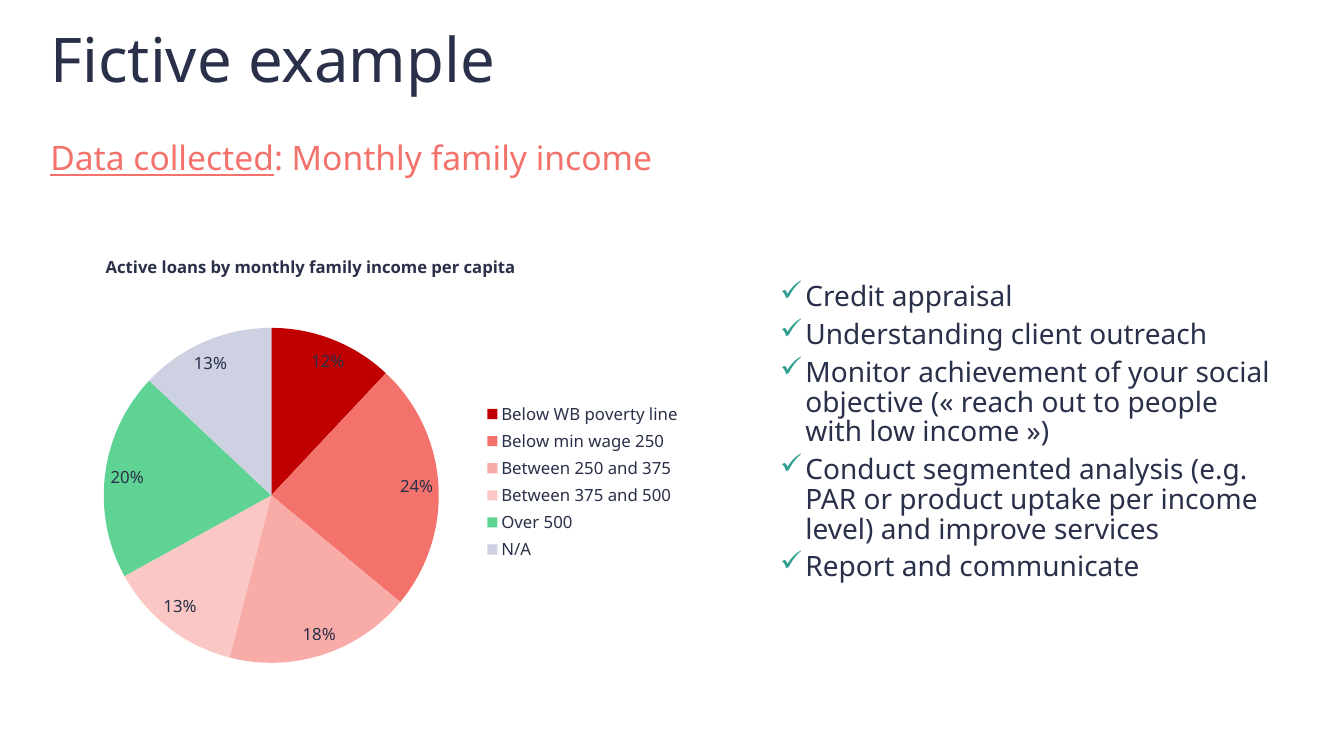
from lxml import etree
from pptx import Presentation
from pptx.chart.data import CategoryChartData
from pptx.dml.color import RGBColor
from pptx.enum.chart import XL_CHART_TYPE, XL_LABEL_POSITION, XL_LEGEND_POSITION
from pptx.enum.text import MSO_ANCHOR, MSO_AUTO_SIZE, PP_ALIGN
from pptx.oxml import parse_xml
from pptx.oxml.ns import nsdecls, qn
from pptx.util import Inches, Pt

FONT = "Noto Sans"
NAVY = RGBColor(0x2A, 0x30, 0x49)
CORAL = RGBColor(0xF3, 0x73, 0x6C)
TEAL = RGBColor(0x2E, 0xA0, 0x92)

TITLE = "Fictive example"
SUBTITLE = ("Data collected", ": Monthly family income")
CHART_TITLE = "Active loans by monthly family income per capita"
USES = [
    "Credit appraisal",
    "Understanding client outreach",
    "Monitor achievement of your social objective («\u00a0reach out to people with low income\u00a0»)",
    "Conduct segmented analysis (e.g. PAR or product uptake per income level) and improve services",
    "Report and communicate",
]
INCOME_GROUPS = [
    ("Below WB poverty line", 0.12, RGBColor(0xC0, 0x00, 0x00)),
    ("Below min wage 250", 0.24, CORAL),
    ("Between 250 and 375", 0.18, RGBColor(0xF8, 0xAB, 0xA7)),
    ("Between 375 and 500", 0.13, RGBColor(0xFA, 0xC7, 0xC4)),
    ("Over 500", 0.2, RGBColor(0x5F, 0xD3, 0x94)),
    ("N/A", 0.13, RGBColor(0xCD, 0xD1, 0xE2)),
]
PIE_AREA = {"x": 0.07, "y": 0.1, "w": 0.53, "h": 0.87}


def style_font(font, size, color, bold=False):
    """Apply the slide typeface with a size and colour."""
    font.name = FONT
    font.size = Pt(size)
    font.color.rgb = color
    font.bold = bold


def add_text(slide, box, paragraphs, size, color, bold=False, spacing=1.0):
    """Add a wrapped text box and return its paragraphs."""
    frame = slide.shapes.add_textbox(*map(Inches, box)).text_frame
    frame.word_wrap = True
    frame.text = "\n".join(paragraphs)
    for paragraph in frame.paragraphs:
        paragraph.space_after = Pt(6)
        paragraph.line_spacing = spacing
        for run in paragraph.runs:
            style_font(run.font, size, color, bold)
    return frame.paragraphs


def add_check(paragraph):
    """Give a paragraph a hanging check mark."""
    properties = paragraph._p.get_or_add_pPr()
    properties.set("marL", str(Inches(0.25)))
    properties.set("indent", str(-Inches(0.25)))
    color = etree.SubElement(properties, qn("a:buClr"))
    etree.SubElement(color, qn("a:srgbClr"), val=str(TEAL))
    etree.SubElement(properties, qn("a:buChar"), char="✓")


def add_title(slide):
    """Place and format the slide title."""
    title = slide.shapes.title
    title.left, title.top, title.width, title.height = map(Inches, (0.4, 0.08, 11.5, 0.98))
    frame = title.text_frame
    frame.text = TITLE
    frame.auto_size = MSO_AUTO_SIZE.NONE
    frame.vertical_anchor = MSO_ANCHOR.MIDDLE
    paragraph = frame.paragraphs[0]
    paragraph.alignment = PP_ALIGN.LEFT
    paragraph.space_after = Pt(6)
    style_font(paragraph.runs[0].font, 44, NAVY)


def add_income_chart(slide):
    """Add the pie chart of loans by income group."""
    data = CategoryChartData(number_format="0%")
    data.categories = [name for name, _, _ in INCOME_GROUPS]
    data.add_series("Series 1", [share for _, share, _ in INCOME_GROUPS])
    box = map(Inches, (0.59, 2.85, 6.27, 3.86))
    chart = slide.shapes.add_chart(XL_CHART_TYPE.PIE, *box, data).chart
    chart.has_title = False
    style_font(chart.font, 12, NAVY)
    chart.has_legend = True
    chart.legend.position = XL_LEGEND_POSITION.RIGHT
    chart.legend.include_in_layout = False

    plot = chart.plots[0]
    plot.vary_by_categories = True
    plot.has_data_labels = True
    labels = plot.data_labels
    labels.show_value = True
    labels.show_percentage = False
    labels.number_format = "0%"
    labels.number_format_is_linked = False
    labels.position = XL_LABEL_POSITION.BEST_FIT
    style_font(labels.font, 12, NAVY)
    for index, (_, _, color) in enumerate(INCOME_GROUPS):
        point = plot.series[0].points[index]
        point.format.fill.solid()
        point.format.fill.fore_color.rgb = color
        point.format.line.fill.background()

    sizes = "".join(f'<c:{key} val="{value}"/>' for key, value in PIE_AREA.items())
    layout = parse_xml(
        f'<c:layout {nsdecls("c")}><c:manualLayout><c:layoutTarget val="inner"/>'
        f'<c:xMode val="edge"/><c:yMode val="edge"/>{sizes}</c:manualLayout></c:layout>'
    )
    plot_area = chart._chartSpace.chart.plotArea
    for old_layout in plot_area.findall(qn("c:layout")):
        plot_area.remove(old_layout)
    plot_area.insert(0, layout)


def main():
    """Build the slide and save it."""
    presentation = Presentation()
    presentation.slide_width = Inches(13.33)
    presentation.slide_height = Inches(7.5)
    slide = presentation.slides.add_slide(presentation.slide_layouts[5])
    add_title(slide)

    uses = add_text(slide, (7.64, 2.76, 5.14, 3.91), USES, 20, NAVY, spacing=0.88)
    for paragraph in uses:
        add_check(paragraph)

    add_text(slide, (0.95, 2.52, 4.52, 0.39), [CHART_TITLE], 11.9, NAVY, True, 0.9)

    label, detail = SUBTITLE
    subtitle = add_text(slide, (0.4, 1.31, 10.95, 0.63), [label], 24, CORAL)[0]
    subtitle.runs[0].font.underline = True
    detail_run = subtitle.add_run()
    detail_run.text = detail
    style_font(detail_run.font, 24, CORAL)

    add_income_chart(slide)
    presentation.save("out.pptx")


if __name__ == "__main__":
    main()
